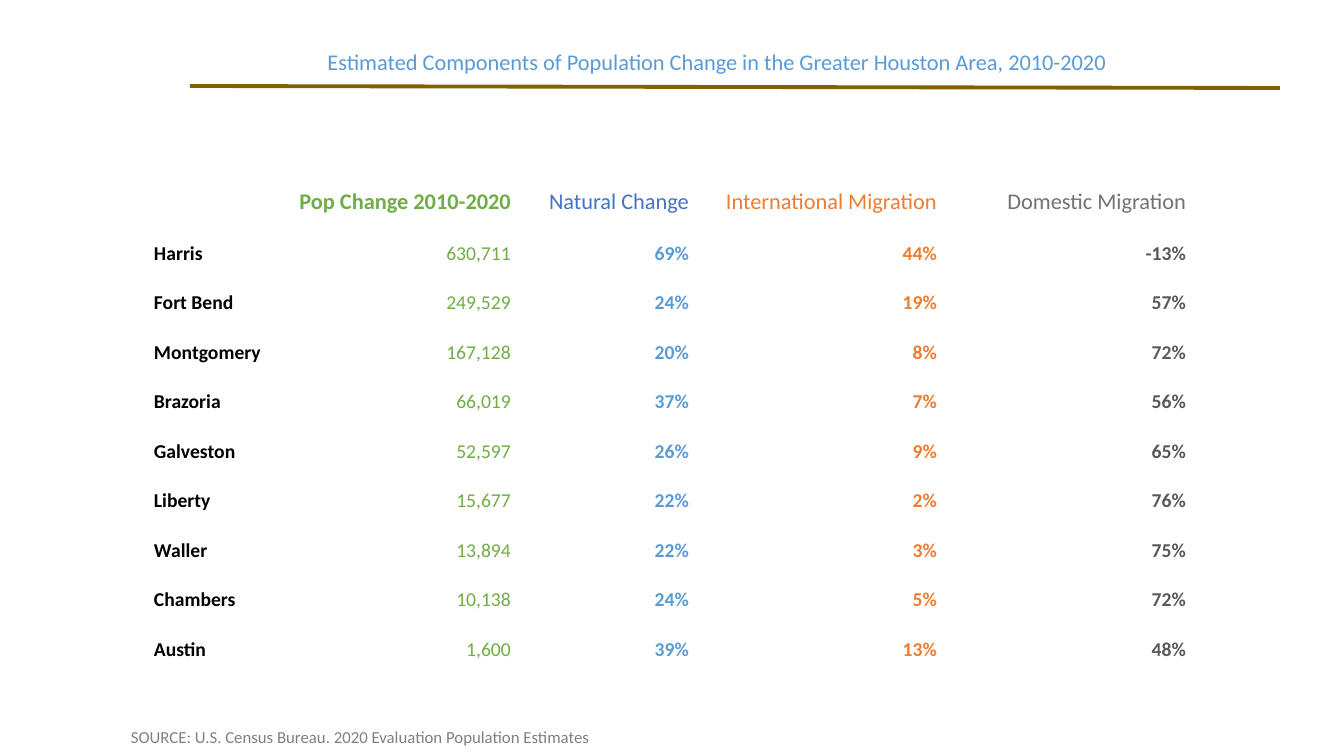
"""Build the slide on components of population change in the Greater Houston area."""

from dataclasses import dataclass

from lxml.etree import SubElement
from pptx import Presentation
from pptx.dml.color import RGBColor
from pptx.enum.shapes import MSO_CONNECTOR as Connector
from pptx.enum.text import MSO_ANCHOR as Anchor, MSO_AUTO_SIZE as AutoSize, PP_ALIGN as Align
from pptx.oxml.ns import qn
from pptx.slide import Slide
from pptx.table import _Cell as Cell
from pptx.text.text import _Paragraph as Paragraph
from pptx.util import Emu, Pt

EMU_PER_PX = 914400 / 100.8
FONT = "Calibri"
COLORS = {
    "rule": "806000",
    "title": "5B9BD5",
    "source": "808080",
    "county": "000000",
    "total": "70AD47",
    "natural_head": "4472C4",
    "natural": "5B9BD5",
    "international": "ED7D31",
    "domestic_head": "767171",
    "domestic": "595959",
}
TITLE = "Estimated Components of Population Change in the Greater Houston Area, 2010-2020"
SOURCE = "SOURCE: U.S. Census Bureau. 2020 Evaluation Population Estimates"


@dataclass(frozen=True)
class Column:
    """A table column with its heading, width in px and text styles."""

    heading: str
    width: int
    head_color: str
    color: str
    head_bold: bool = False
    bold: bool = True
    align: Align = Align.RIGHT


COLUMNS = [
    Column("", 123, "county", "county", align=Align.LEFT),
    Column("Pop Change 2010-2020", 236, "total", "total", head_bold=True, bold=False),
    Column("Natural Change", 178, "natural_head", "natural"),
    Column("International Migration", 248, "international", "international"),
    Column("Domestic Migration", 249, "domestic_head", "domestic"),
    Column("", 7, "county", "county"),
]
COUNTIES = [
    ("Harris", "630,711", "69%", "44%", "-13%", ""),
    ("Fort Bend", "249,529", "24%", "19%", "57%", ""),
    ("Montgomery", "167,128", "20%", "8%", "72%", ""),
    ("Brazoria", "66,019", "37%", "7%", "56%", ""),
    ("Galveston", "52,597", "26%", "9%", "65%", ""),
    ("Liberty", "15,677", "22%", "2%", "76%", ""),
    ("Waller", "13,894", "22%", "3%", "75%", ""),
    ("Chambers", "10,138", "24%", "5%", "72%", ""),
    ("Austin", "1,600", "39%", "13%", "48%", ""),
]
HEADER_HEIGHT = 59
BODY_HEIGHT = 446


def px(length: float) -> Emu:
    """Turn px into EMU."""
    return Emu(round(length * EMU_PER_PX))


def style(paragraph: Paragraph, size: int, color: str, align: Align, bold: bool = False) -> None:
    """Set the font and alignment of a paragraph."""
    paragraph.alignment = align
    font = paragraph.font
    font.name, font.size, font.bold = FONT, Pt(size), bold
    font.color.rgb = RGBColor.from_string(COLORS[color])


def add_title(slide: Slide) -> None:
    """Fill and place the title, with the rule below it."""
    title = slide.shapes.title
    title.left, title.top, title.width, title.height = px(145), px(46), px(1144), px(34)
    frame = title.text_frame
    frame.text = TITLE
    frame.auto_size = AutoSize.NONE
    frame.vertical_anchor = Anchor.TOP
    paragraph = frame.paragraphs[0]
    paragraph.line_spacing = 0.9
    style(paragraph, 16, "title", Align.CENTER)

    rule = slide.shapes.add_connector(Connector.STRAIGHT, px(190), px(86), px(1280), px(88))
    rule.line.color.rgb = RGBColor.from_string(COLORS["rule"])
    rule.line.width = Pt(2.75)
    SubElement(rule._element.spPr, qn("a:effectLst"))


def add_source(slide: Slide) -> None:
    """Add the source line at the foot."""
    frame = slide.shapes.add_textbox(px(121), px(722), px(882), px(30)).text_frame
    frame.word_wrap = True
    frame.text = SOURCE
    style(frame.paragraphs[0], 12, "source", Align.LEFT)


def fill_cell(cell: Cell, text: str, size: int, color: str, align: Align, bold: bool) -> None:
    """Write one table cell without a fill."""
    cell.fill.background()
    cell.vertical_anchor = Anchor.BOTTOM
    cell.margin_left = cell.margin_right = cell.margin_top = px(1)
    cell.margin_bottom = 0
    cell.text = text
    style(cell.text_frame.paragraphs[0], size, color, align, bold)


def add_county_table(slide: Slide) -> None:
    """Add the table of counties."""
    width = sum(column.width for column in COLUMNS)
    table = slide.shapes.add_table(
        len(COUNTIES) + 1, len(COLUMNS), px(153), px(157), px(width), px(HEADER_HEIGHT + BODY_HEIGHT)
    ).table
    table.first_row = table.horz_banding = False
    for index, row in enumerate(table.rows):
        row.height = px(BODY_HEIGHT / len(COUNTIES)) if index else px(HEADER_HEIGHT)
    for index, column in enumerate(COLUMNS):
        table.columns[index].width = px(column.width)
        fill_cell(table.cell(0, index), column.heading, 16, column.head_color, column.align, column.head_bold)
        for row_index, county in enumerate(COUNTIES, start=1):
            fill_cell(table.cell(row_index, index), county[index], 14, column.color, column.align, column.bold)


def main() -> None:
    """Build and save the presentation."""
    presentation = Presentation()
    presentation.slide_width, presentation.slide_height = px(1344), px(756)
    slide = presentation.slides.add_slide(presentation.slide_layouts[5])
    add_title(slide)
    add_source(slide)
    add_county_table(slide)
    presentation.save("out.pptx")


if __name__ == "__main__":
    main()
